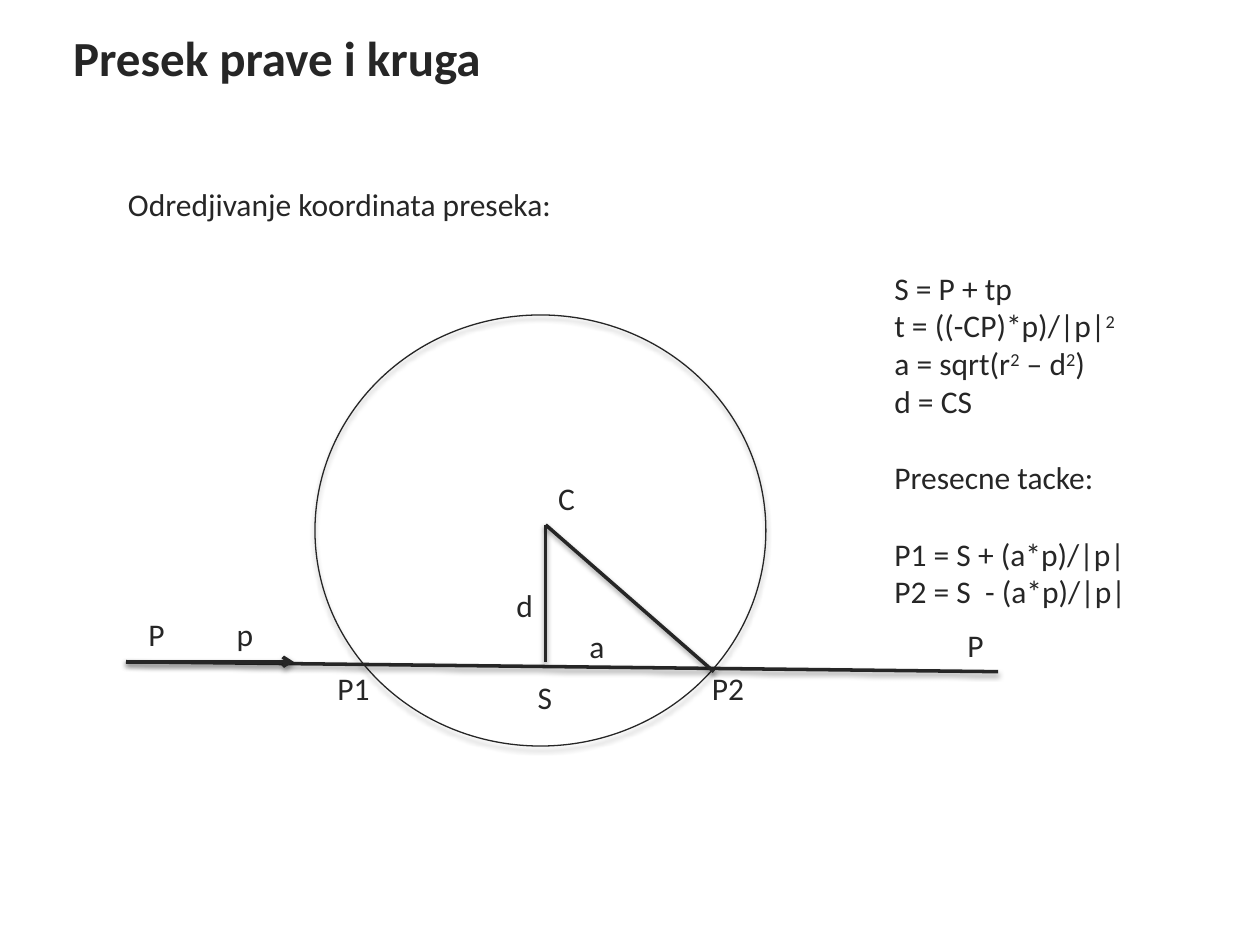
import pptx
import pptx.util
import pptx.dml.color
import pptx.enum.shapes
import pptx.enum.text
import pptx.oxml
import pptx.oxml.ns

Cm, Pt = pptx.util.Cm, pptx.util.Pt
COLORS = {"ink": "262626", "shade": "000000"}
LINE = 22  # height of one text line, in points


def ink():
    return pptx.dml.color.RGBColor.from_string(COLORS["ink"])


def style(para, size=18, bold=False):
    for run in para.runs:
        font = run.font
        font.name, font.size, font.bold = "Calibri", Pt(size), bold
        font.color.rgb = ink()


def outline(shape, width, alpha, dist):
    """Draw the line of a shape and drop a soft shadow below it."""
    shape.line.color.rgb = ink()
    shape.line.width = Pt(width)
    props = shape._element.spPr
    for old in props.findall(pptx.oxml.ns.qn("a:effectLst")):
        props.remove(old)
    props.append(pptx.oxml.parse_xml(
        f'<a:effectLst {pptx.oxml.ns.nsdecls("a")}>'
        f'<a:outerShdw blurRad="{Pt(3.1)}" dist="{Pt(dist)}" dir="5400000" rotWithShape="0">'
        f'<a:srgbClr val="{COLORS["shade"]}"><a:alpha val="{alpha * 1000}"/></a:srgbClr>'
        '</a:outerShdw></a:effectLst>'))


def add_text(slide, text, left, top, width, height=1.02):
    box = slide.shapes.add_textbox(Cm(left), Cm(top), Cm(width), Cm(height))
    box.text_frame.word_wrap = True
    box.text_frame.text = text
    for para in box.text_frame.paragraphs:
        style(para)
    return box


def add_title(slide, left, top, width, height):
    title = slide.shapes.title
    title.left, title.top = Cm(left), Cm(top)
    title.width, title.height = Cm(width), Cm(height)
    frame = title.text_frame
    frame.text = "Presek prave i kruga"
    frame.vertical_anchor = pptx.enum.text.MSO_ANCHOR.MIDDLE
    para = frame.paragraphs[0]
    para.alignment = pptx.enum.text.PP_ALIGN.LEFT
    style(para, 28, True)


def add_sketch(slide, left, top):
    """Circle cut by a line, with its triangle and point labels."""
    circle = slide.shapes.add_shape(
        pptx.enum.shapes.MSO_SHAPE.OVAL,
        Cm(left + 3.81), Cm(top), Cm(9.09), Cm(8.69))
    circle.shadow.inherit = False
    circle.fill.background()
    outline(circle, 0.75, 35, 1.8)

    start, tip, end = (0, 6.99), (3.38, 6.99), (17.58, 7.19)
    center, foot, cut = (8.46, 4.23), (8.46, 6.99), (11.85, 7.19)
    for head, tail in ((end, start), (start, tip), (center, cut), (center, foot)):
        line = slide.shapes.add_connector(
            pptx.enum.shapes.MSO_CONNECTOR.STRAIGHT,
            Cm(left + head[0]), Cm(top + head[1]),
            Cm(left + tail[0]), Cm(top + tail[1]))
        outline(line, 2, 38, 1.6)
        if tail == tip:
            line.line._get_or_add_ln().append(pptx.oxml.parse_xml(
                f'<a:tailEnd {pptx.oxml.ns.nsdecls("a")} type="arrow"/>'))

    labels = (("P", 0.2, 5.92), ("p", 1.98, 5.92), ("P", 16.71, 6.15),
              ("P1", 4.01, 7.01), ("P2", 11.56, 7.01), ("d", 7.62, 5.33),
              ("a", 9.09, 6.17), ("C", 8.46, 3.18), ("S", 8.05, 7.19))
    for text, x, y in labels:
        add_text(slide, text, left + x, top + y, 0.7 + 0.5 * len(text))


def add_math(slide, left, top, width, height):
    """List the formulas; a ^ comes before each raised digit."""
    rows = ("S = P + tp", "t = ((-CP)*p)/|p|^2", "a = sqrt(r^2 – d^2)", "d = CS",
            "Presecne tacke:", "P1 = S + (a*p)/|p|", "P2 = S  - (a*p)/|p|")
    frame = add_text(slide, "\n".join(rows), left, top, width, height).text_frame
    for para, row in zip(frame.paragraphs, rows):
        if row.startswith(("Presecne", "P1")):
            para.space_before = Pt(LINE)
        first, *rest = row.split("^")
        para.text = first
        for part in rest:
            power = para.add_run()
            power.text = part[0]
            power._r.get_or_add_rPr().set("baseline", "30000")
            if part[1:]:
                para.add_run().text = part[1:]
        style(para)


def main():
    deck = pptx.Presentation()
    deck.slide_width, deck.slide_height = Cm(25.4), Cm(19.05)
    slide = deck.slides.add_slide(deck.slide_layouts[5])
    add_title(slide, 1.22, 0.2, 23.34, 1.9)
    add_text(slide, "Odredjivanje koordinata preseka:", 2.33, 3.6, 22)
    add_sketch(slide, 2.54, 6.35)
    add_math(slide, 17.78, 5.29, 6.55, 7.95)
    deck.save("out.pptx")


if __name__ == "__main__":
    main()
